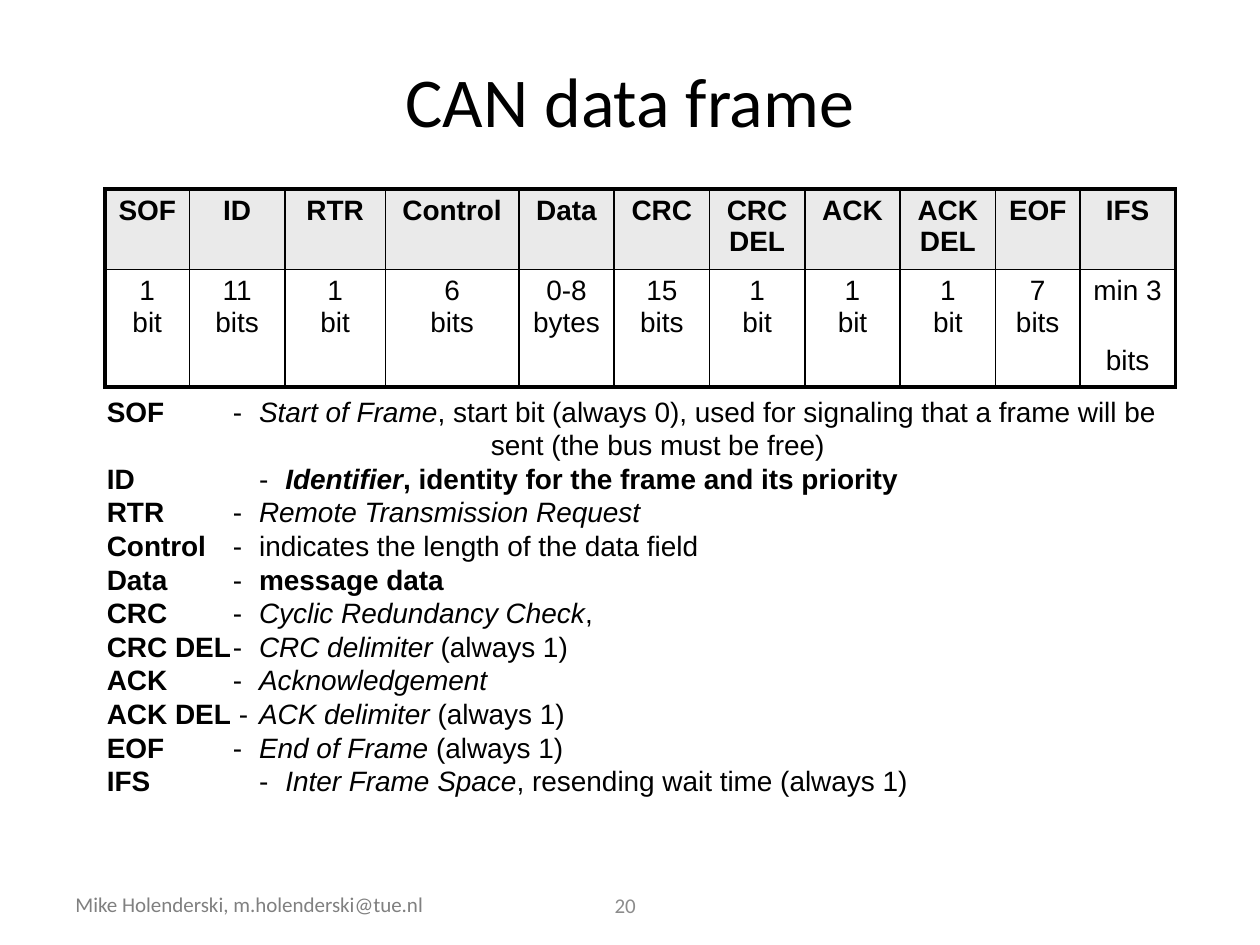
from collections import namedtuple

from lxml.etree import SubElement
from pptx import Presentation
from pptx.dml.color import RGBColor
from pptx.enum.text import MSO_ANCHOR, PP_ALIGN
from pptx.oxml.ns import qn
from pptx.util import Pt

Box = namedtuple("Box", "left top width height")
BLACK = "000000"
THICK, THIN = 2.25, 1
FIELDS = [
    ("SOF", "1|bit", 48.25),
    ("ID", "11|bits", 54.5),
    ("RTR", "1|bit", 57.5),
    ("Control", "6|bits", 76.25),
    ("Data", "0-8|bytes", 54.5),
    ("CRC", "15|bits", 54.5),
    ("CRC|DEL", "1|bit", 54.5),
    ("ACK", "1|bit", 54.5),
    ("ACK|DEL", "1|bit", 54.5),
    ("EOF", "7|bits", 48.25),
    ("IFS", "min 3||bits", 54.5),
]
NEAR, FAR, TIGHT = (72, 87), (87, 102), (75.5, 87)
MEANINGS = [
    ("SOF", (72, 87, 219.5), [
        ("Start of Frame", "i"),
        (", start bit (always 0), used for signaling that a frame will be|\t\t\tsent (the bus must be free)", ""),
    ]),
    ("ID", FAR, [("Identifier", "bi"), (", identity for the frame and its priority", "b")]),
    ("RTR", NEAR, [("Remote Transmission Request", "i")]),
    ("Control", NEAR, [("indicates the length of the data field", "")]),
    ("Data", NEAR, [("message data", "b")]),
    ("CRC", NEAR, [("Cyclic Redundancy Check", "i"), (",", "")]),
    ("CRC DEL", NEAR, [("CRC delimiter ", "i"), ("(always 1)", "")]),
    ("ACK", NEAR, [("Acknowledgement", "i")]),
    ("ACK DEL", TIGHT, [("ACK delimiter ", "i"), ("(always 1)", "")]),
    ("EOF", NEAR, [("End of Frame ", "i"), ("(always 1)", "")]),
    ("IFS", FAR, [("Inter Frame Space", "i"), (", resending wait time (always 1)", "")]),
]


def rgb(color):
    return RGBColor.from_string(color)


def add_spans(para, text, size, font="Arial", color=BLACK, style=""):
    for index, line in enumerate(text.split("|")):
        if index:
            para.add_line_break()
        if line:
            span = para.add_run()
            span.text = line
            span.font.name = font
            span.font.size = Pt(size)
            span.font.color.rgb = rgb(color)
            span.font.bold = "b" in style
            span.font.italic = "i" in style


def add_frame(page, box):
    frame = page.shapes.add_textbox(*map(Pt, box)).text_frame
    frame.word_wrap = True
    return frame


def add_label(page, box, text, size, color, align, anchor):
    frame = add_frame(page, box)
    frame.vertical_anchor = anchor
    para = frame.paragraphs[0]
    para.alignment = align
    add_spans(para, text, size, "Calibri", color)


def set_borders(cell, widths):
    properties = cell._tc.get_or_add_tcPr()
    for index, (side, width) in enumerate(zip(("lnL", "lnR", "lnT", "lnB"), widths)):
        line = SubElement(properties, qn(f"a:{side}"), w=str(Pt(width)))
        fill = SubElement(line, qn("a:solidFill"))
        SubElement(fill, qn("a:srgbClr"), val=BLACK)
        properties.insert(index, line)


def add_field_table(page, box):
    table = page.shapes.add_table(2, len(FIELDS), *map(Pt, box)).table
    table.rows[0].height = Pt(46)
    table.rows[1].height = Pt(box.height - 46)
    last = len(FIELDS) - 1
    for column, (name, length, width) in enumerate(FIELDS):
        table.columns[column].width = Pt(width)
        for row, text in enumerate((name, length)):
            cell = table.cell(row, column)
            cell.fill.solid()
            cell.fill.fore_color.rgb = rgb("FFFFFF" if row else "EAEAEA")
            para = cell.text_frame.paragraphs[0]
            para.alignment = PP_ALIGN.CENTER
            add_spans(para, text, 16, style="" if row else "b")
            outer = (column == 0, column == last, row == 0, row == 1)
            set_borders(cell, [THICK if edge else THIN for edge in outer])


def add_meanings(page, box):
    frame = add_frame(page, box)
    for index, (name, stops, parts) in enumerate(MEANINGS):
        para = frame.add_paragraph() if index else frame.paragraphs[0]
        tabs = SubElement(para._p.get_or_add_pPr(), qn("a:tabLst"))
        for stop in stops:
            SubElement(tabs, qn("a:tab"), pos=str(Pt(stop)), algn="l")
        para.line_spacing = Pt(19.2)
        add_spans(para, name, 16, style="b")
        add_spans(para, "\t-\t", 16)
        for text, style in parts:
            add_spans(para, text, 16, style=style)


def main():
    deck = Presentation()
    deck.slide_width, deck.slide_height = Pt(720), Pt(540)
    page = deck.slides.add_slide(deck.slide_layouts[6])
    add_label(page, Box(36, 506, 282, 22), "Mike Holenderski, m.holenderski@tue.nl",
              12, "808080", PP_ALIGN.LEFT, MSO_ANCHOR.TOP)
    add_label(page, Box(36, 21.6, 648, 70.6), "CAN data frame",
              40, BLACK, PP_ALIGN.CENTER, MSO_ANCHOR.MIDDLE)
    add_field_table(page, Box(60, 108, 612, 106))
    add_meanings(page, Box(54, 221.75, 656, 270))
    add_label(page, Box(318, 506, 78.5, 22), "20",
              12, "8C8C8C", PP_ALIGN.CENTER, MSO_ANCHOR.MIDDLE)
    deck.save("out.pptx")


if __name__ == "__main__":
    main()
